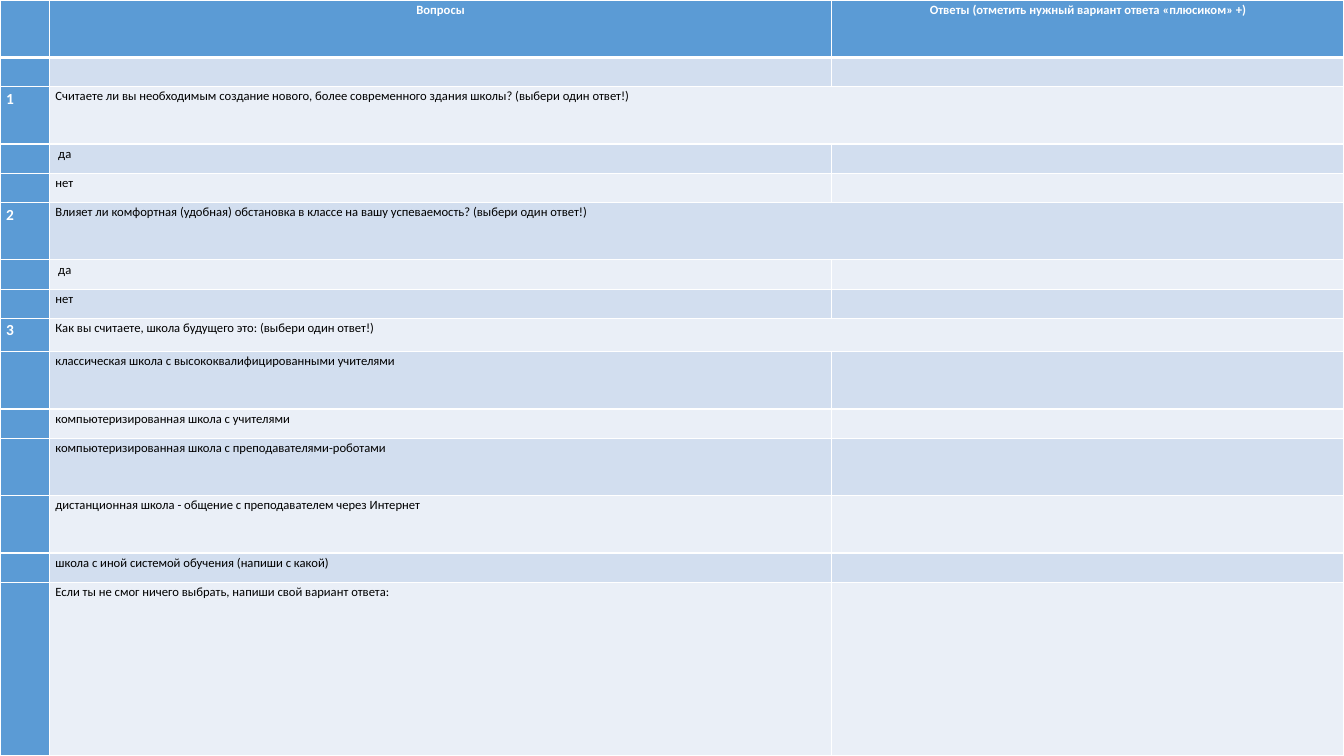
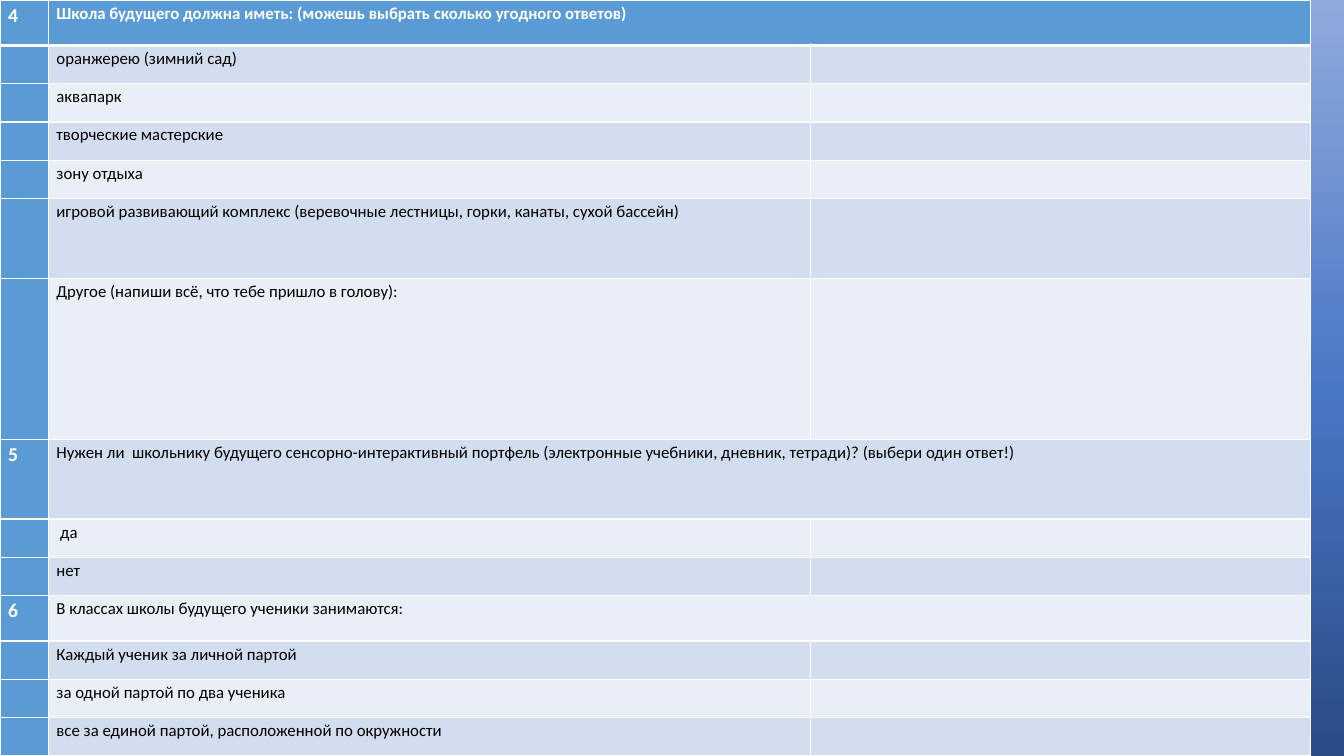
from dataclasses import dataclass

from lxml.etree import SubElement
from pptx import Presentation
from pptx.dml.color import RGBColor
from pptx.enum.text import MSO_ANCHOR as Anchor, PP_ALIGN as Align
from pptx.oxml.ns import qn
from pptx.util import Inches, Pt

COLORS = {
    "header": "5B9BD5",
    "band_dark": "D2DEEF",
    "band_light": "EAEFF7",
    "white": "FFFFFF",
    "black": "000000",
}
BACKGROUND_STOPS = [(0, "2A4B86"), (48, "4A76C6"), (100, "8FAADC")]
FONT = "Calibri"
LINE_SPACING = 1.15
THIN, THICK = 1, 3


@dataclass
class Row:
    height: float
    text: str = ""
    number: str = ""  # a numbered question spans the answer column
    answer: str = ""


@dataclass
class TableStyle:
    columns: list
    text_size: int
    number_size: int
    inset: float


# Questionnaire content
FIRST_STYLE = TableStyle([0.49, 7.76, 5.08], 9, 11, 0.06)
FIRST_ROWS = [
    Row(0.57, "Вопросы", answer="Ответы (отметить нужный вариант ответа «плюсиком» +)"),
    Row(0.29),
    Row(0.57, "Считаете ли вы необходимым создание нового, более современного здания школы? "
              "(выбери один ответ!)", "1"),
    Row(0.29, " да"),
    Row(0.29, "нет"),
    Row(0.57, "Влияет ли комфортная (удобная) обстановка в классе на вашу успеваемость? "
              "(выбери один ответ!)", "2"),
    Row(0.29, " да"),
    Row(0.29, "нет"),
    Row(0.33, "Как вы считаете, школа будущего это: (выбери один ответ!)", "3"),
    Row(0.57, "классическая школа с высококвалифицированными учителями"),
    Row(0.29, "компьютеризированная школа с учителями"),
    Row(0.57, "компьютеризированная школа с преподавателями-роботами"),
    Row(0.57, "дистанционная школа - общение с преподавателем через Интернет"),
    Row(0.29, "школа с иной системой обучения (напиши с какой)"),
    Row(1.72, "Если ты не смог ничего выбрать, напиши свой вариант ответа:"),
]

SECOND_STYLE = TableStyle([0.48, 7.56, 4.96], 12, 14, 0.08)
SECOND_ROWS = [
    Row(0.45, "Школа будущего должна иметь: (можешь выбрать сколько угодного ответов)", "4"),
    Row(0.38, "оранжерею (зимний сад)"),
    Row(0.38, "аквапарк"),
    Row(0.38, "творческие мастерские"),
    Row(0.38, "зону отдыха"),
    Row(0.79, "игровой развивающий комплекс (веревочные лестницы, горки, канаты, сухой бассейн)"),
    Row(1.6, "Другое (напиши всё, что тебе пришло в голову):"),
    Row(0.79, "Нужен ли  школьнику будущего сенсорно-интерактивный портфель "
              "(электронные учебники, дневник, тетради)? (выбери один ответ!)", "5"),
    Row(0.38, " да"),
    Row(0.38, "нет"),
    Row(0.45, "В классах школы будущего ученики занимаются:", "6"),
    Row(0.38, "Каждый ученик за личной партой"),
    Row(0.38, "за одной партой по два ученика"),
    Row(0.38, "все за единой партой, расположенной по окружности"),
]


def set_background(master):
    fill = master.background.fill
    fill.gradient()
    fill.gradient_angle = 90
    stop_list = next(master.element.iter(qn("a:gsLst")))
    for stop in list(stop_list):
        stop_list.remove(stop)
    for position, color in BACKGROUND_STOPS:
        stop = SubElement(stop_list, qn("a:gs"), pos=str(position * 1000))
        SubElement(stop, qn("a:srgbClr"), val=color)


def set_borders(cell, top, bottom):
    properties = cell._tc.get_or_add_tcPr()
    for side, width in (("L", THIN), ("R", THIN), ("T", top), ("B", bottom)):
        line = SubElement(properties, qn(f"a:ln{side}"), w=str(Pt(width)))
        fill = SubElement(line, qn("a:solidFill"))
        SubElement(fill, qn("a:srgbClr"), val=COLORS["white"])


def fill_cell(cell, color):
    cell.fill.solid()
    cell.fill.fore_color.rgb = RGBColor.from_string(COLORS[color])


def write_cell(cell, text, size, inset, strong, align):
    cell.margin_left = cell.margin_right = Inches(inset)
    cell.margin_top = cell.margin_bottom = 0
    cell.vertical_anchor = Anchor.TOP
    paragraph = cell.text_frame.paragraphs[0]
    paragraph.alignment = align
    paragraph.line_spacing = LINE_SPACING
    if not text:
        # Keeps an empty cell from stretching its row
        SubElement(paragraph._p, qn("a:endParaRPr"), sz=str(size * 100))
        return
    run = paragraph.add_run()
    run.text = text
    run.font.name = FONT
    run.font.size = Pt(size)
    run.font.bold = strong
    run.font.color.rgb = RGBColor.from_string(COLORS["white" if strong else "black"])


def add_questionnaire(slide, rows, style):
    width = Inches(sum(style.columns))
    height = Inches(sum(row.height for row in rows))
    shape = slide.shapes.add_table(len(rows), len(style.columns), 0, 0, width, height)
    table = shape.table
    table.first_row = table.horz_banding = False
    for column, column_width in zip(table.columns, style.columns):
        column.width = Inches(column_width)

    for index, row in enumerate(rows):
        table.rows[index].height = Inches(row.height)
        is_header = index == 0
        band = "header" if is_header else "band_dark" if index % 2 else "band_light"
        align = Align.CENTER if row.answer else Align.LEFT
        for position, text in enumerate((row.number, row.text, row.answer)):
            cell = table.cell(index, position)
            in_first = position == 0
            size = style.number_size if in_first and text else style.text_size
            set_borders(cell, THICK if index == 1 else THIN, THICK if is_header else THIN)
            fill_cell(cell, "header" if in_first else band)
            write_cell(cell, text, size, style.inset, in_first or is_header, align)
        if row.number:
            table.cell(index, 1).merge(table.cell(index, 2))


def main():
    presentation = Presentation()
    presentation.slide_width = Inches(13.33)
    presentation.slide_height = Inches(7.5)
    set_background(presentation.slide_master)
    blank = presentation.slide_layouts[6]
    for rows, style in ((FIRST_ROWS, FIRST_STYLE), (SECOND_ROWS, SECOND_STYLE)):
        add_questionnaire(presentation.slides.add_slide(blank), rows, style)
    presentation.save("out.pptx")


if __name__ == "__main__":
    main()
